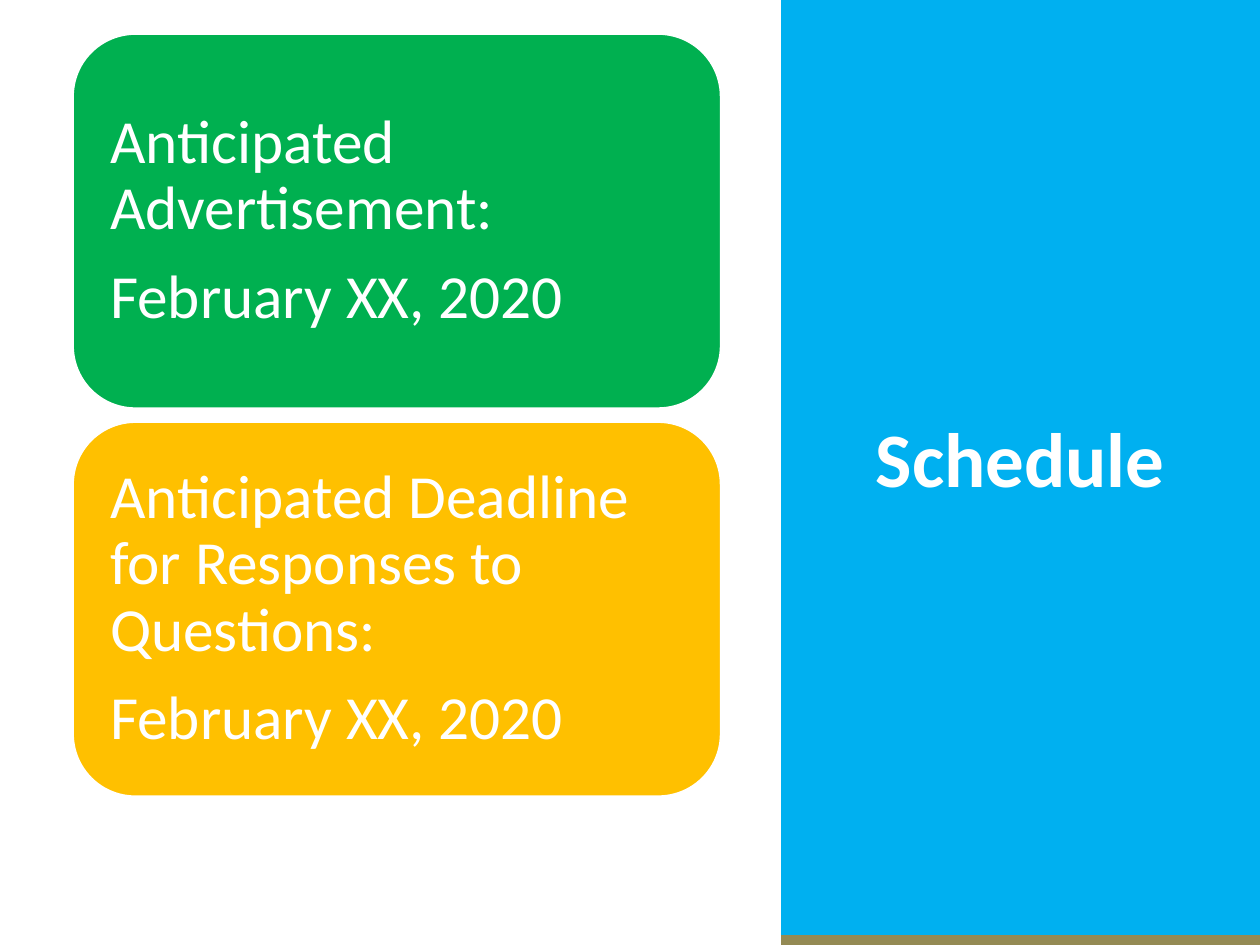
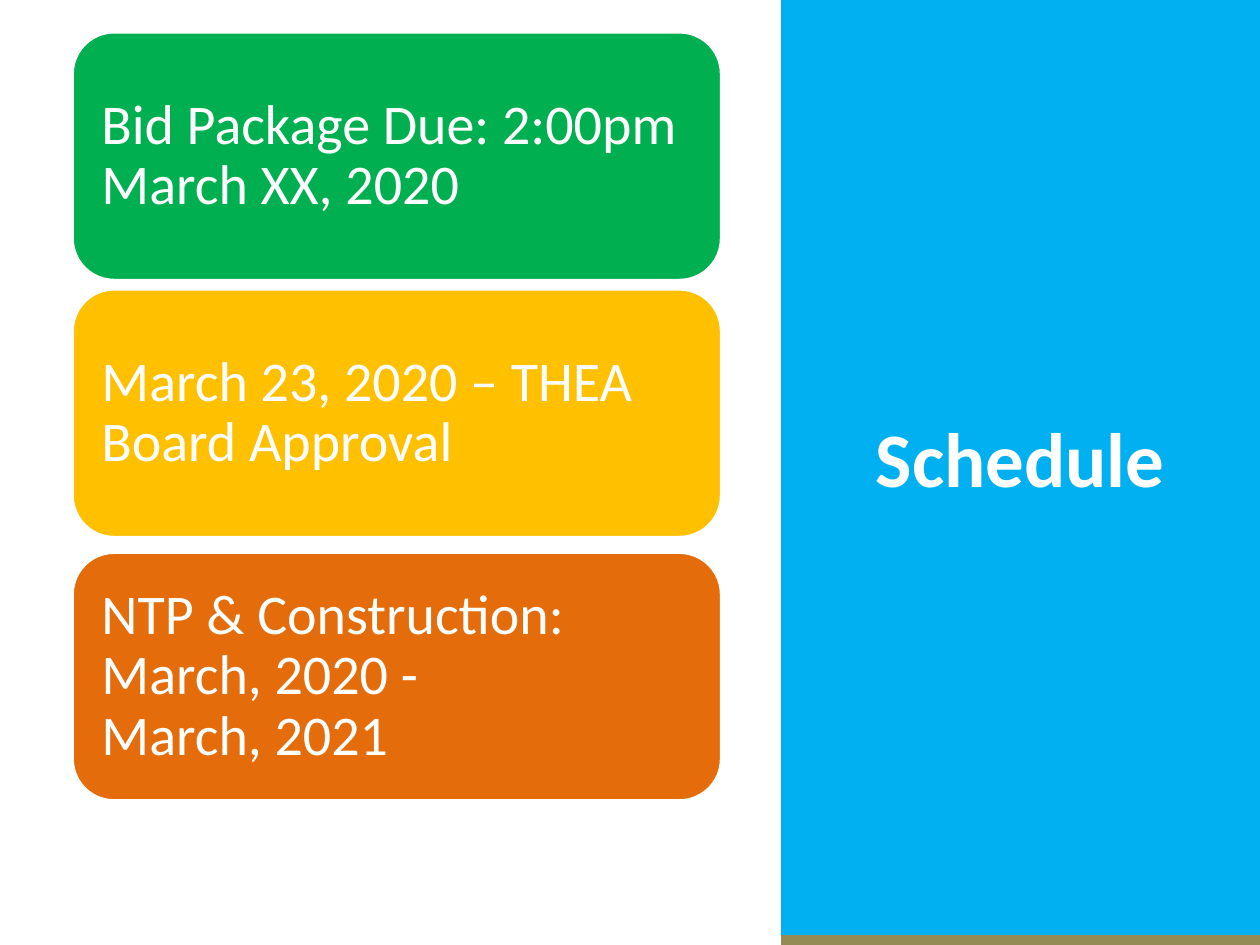
from pptx import Presentation
from pptx.dml.color import RGBColor
from pptx.enum.shapes import MSO_SHAPE as SHAPE
from pptx.enum.text import MSO_ANCHOR as ANCHOR, PP_ALIGN as ALIGN
from pptx.util import Pt

PX = 9144  # 100 px to the inch
FONT = "Calibri"
WHITE, BLUE, OLIVE = "FFFFFF", "00B0F0", "948A54"
CARD_COLORS = ["00B050", "FFC000", "E46C0A"]
BAND_X, BAND_W, BAND_H = 620, 380, 750
CARD_X, CARD_W = 58, 514


def rgb(value):
    return RGBColor.from_string(value)


def add_box(s, kind, x, y, w, h, fill, paras=(), size=32, bold=False,
            align=ALIGN.LEFT, margin=10, line=None):
    """Add a filled shape; each paragraph is a list of lines."""
    sp = s.shapes.add_shape(kind, x * PX, y * PX, w * PX, h * PX)
    sp.shadow.inherit = False
    sp.fill.solid()
    sp.fill.fore_color.rgb = rgb(fill)
    if line:
        sp.line.color.rgb = rgb(line)
        sp.line.width = Pt(1)
    else:
        sp.line.fill.background()

    tf = sp.text_frame
    tf.word_wrap = True
    tf.vertical_anchor = ANCHOR.MIDDLE
    tf.margin_left = tf.margin_right = margin * PX
    tf.margin_top = tf.margin_bottom = margin * PX
    for i, lines in enumerate(paras):
        p = tf.add_paragraph() if i else tf.paragraphs[0]
        p.alignment = align
        p.line_spacing = 0.9
        if i:
            p.space_before = Pt(12.5)
        for j, text in enumerate(lines):
            if j:
                p.add_line_break()
            r = p.add_run()
            r.text = text
            r.font.name = FONT
            r.font.size = Pt(size)
            r.font.bold = bold
            r.font.color.rgb = rgb(WHITE)


# Cards of each slide: text size, inner margin, height, then (top, paragraphs)
slides = [
    (35, 15, 297, [
        (27, [["Anticipated Advertisement:"], ["February XX, 2020"]]),
        (335, [["Anticipated Deadline for Responses to Questions:"],
               ["February XX, 2020"]]),
    ]),
    (32, 13, 196, [
        (26, [["Bid Package Due: 2:00pm March XX, 2020"]]),
        (230, [["March 23, 2020 – THEA Board Approval"]]),
        (439, [["NTP & Construction: March, 2020 -", "March, 2021"]]),
    ]),
]

prs = Presentation()
prs.slide_width, prs.slide_height = 1000 * PX, 750 * PX

for size, margin, height, cards in slides:
    s = prs.slides.add_slide(prs.slide_layouts[6])

    # Title band with the olive edge showing below it
    add_box(s, SHAPE.RECTANGLE, BAND_X, 0, BAND_W, BAND_H, OLIVE)
    add_box(s, SHAPE.RECTANGLE, BAND_X, -8, BAND_W, BAND_H, BLUE,
            [["Schedule"]], size=44, bold=True, align=ALIGN.CENTER)

    # Schedule cards
    for color, (top, paras) in zip(CARD_COLORS, cards):
        add_box(s, SHAPE.ROUNDED_RECTANGLE, CARD_X, top, CARD_W, height, color,
                paras, size=size, margin=margin, line=WHITE)

prs.save("out.pptx")
